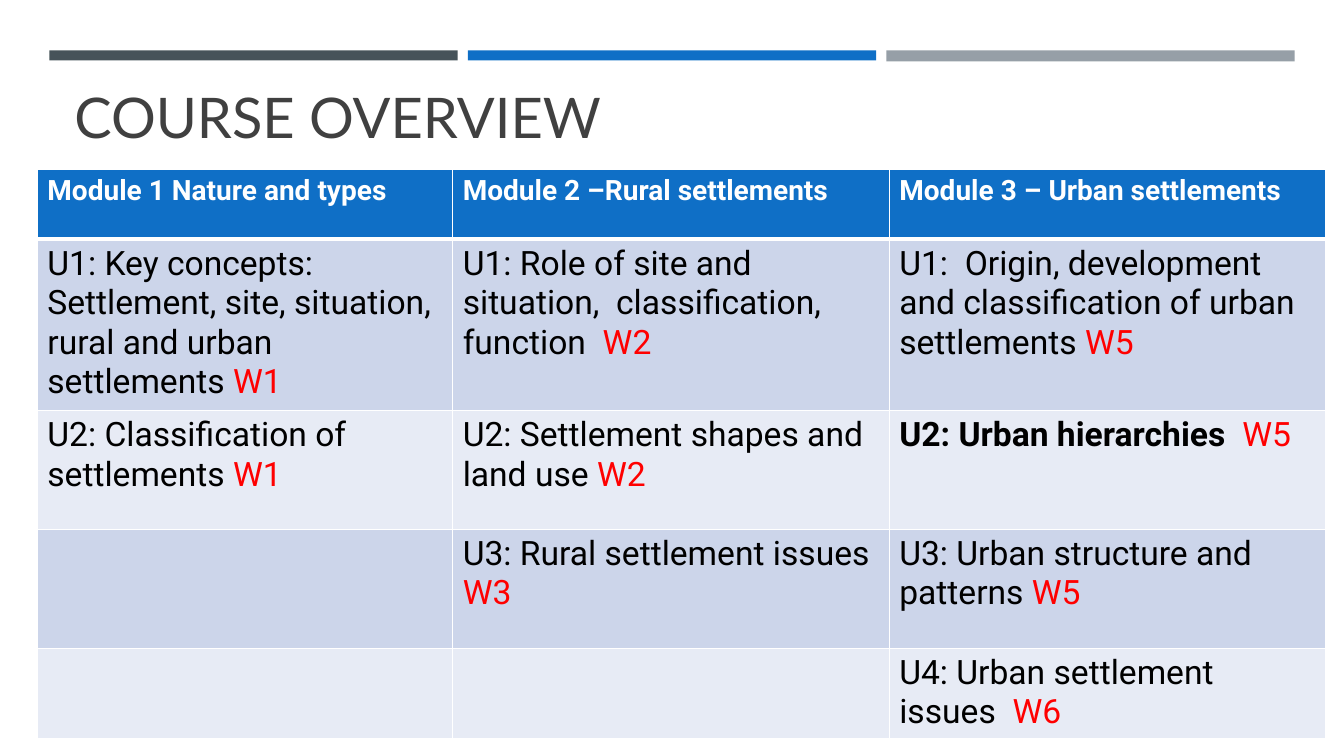
from dataclasses import dataclass

from lxml import etree
from pptx import Presentation
from pptx.dml.color import RGBColor
from pptx.enum.shapes import MSO_SHAPE
from pptx.enum.text import MSO_ANCHOR
from pptx.oxml.ns import qn
from pptx.util import Inches, Pt

RECTANGLE = MSO_SHAPE.RECTANGLE
BOTTOM = MSO_ANCHOR.BOTTOM

COLORS = {
    "slate": "465359", "blue": "0F6FC6", "grey": "969FA7",
    "title": "404040", "white": "FFFFFF", "black": "000000",
    "week": "FF0000", "band_dark": "CCD5EA", "band_light": "E7EBF5",
}
TITLE_FONT, TABLE_FONT = "Lato", "Roboto"
BAR_LEFT, BAR_TOP, BAR_WIDTH, BAR_PITCH = 0.49, 0.5, 4.05, 4.15
COLUMN_WIDTHS = (4.12, 4.33, 4.33)
ROW_HEIGHTS = (0.69, 1.69, 1.18, 1.18, 0.69)


@dataclass
class Bar:
    color: str
    height: float = 0.1


@dataclass
class Unit:
    topic: str = ""
    week: str = ""
    bold: bool = False


BARS = (Bar("slate"), Bar("blue"), Bar("grey", 0.11))
MODULES = (
    "Module 1 Nature and types",
    "Module 2 –Rural settlements",
    "Module 3 – Urban settlements",
)
UNIT_ROWS = (
    (Unit("U1: Key concepts: Settlement, site, situation, rural and urban settlements ", "W1"),
     Unit("U1: Role of site and situation,  classification, function  ", "W2"),
     Unit("U1:  Origin, development and classification of urban settlements ", "W5")),
    (Unit("U2: Classification of settlements ", "W1"),
     Unit("U2: Settlement shapes and land use ", "W2"),
     Unit("U2: Urban hierarchies  ", "W5", bold=True)),
    (Unit(),
     Unit("U3: Rural settlement issues ", "W3"),
     Unit("U3: Urban structure and patterns ", "W5")),
    (Unit(),
     Unit(),
     Unit("U4: Urban settlement issues ", " W6")),
)


def rgb(name: str) -> RGBColor:
    return RGBColor.from_string(COLORS[name])


def set_font(font, name: str, size: float, color: str | None = None) -> None:
    font.name, font.size = name, Pt(size)
    if color:
        font.color.rgb = rgb(color)


def add_bars(slide) -> None:
    for i, bar in enumerate(BARS):
        sp = slide.shapes.add_shape(
            RECTANGLE, Inches(BAR_LEFT + i * BAR_PITCH), Inches(BAR_TOP),
            Inches(BAR_WIDTH), Inches(bar.height))
        sp.shadow.inherit = False
        sp.fill.solid()
        sp.fill.fore_color.rgb = rgb(bar.color)
        sp.line.fill.background()


def add_title(slide) -> None:
    box = slide.shapes.add_textbox(Inches(0.64), Inches(0.63), Inches(12.06), Inches(0.9))
    tf = box.text_frame
    tf.word_wrap = True
    tf.vertical_anchor = BOTTOM
    p = tf.paragraphs[0]
    p.text = "COURSE OVERVIEW"
    set_font(p.font, TITLE_FONT, 40, "title")


def style_cell(cell, fill: str, top: float = 1, bottom: float = 1) -> None:
    """Fill the cell and give it white borders, widths in points."""
    cell.fill.solid()
    cell.fill.fore_color.rgb = rgb(fill)
    tc_pr = cell._tc.get_or_add_tcPr()
    widths = {"lnL": 1, "lnR": 1, "lnT": top, "lnB": bottom}
    for i, (side, width) in enumerate(widths.items()):
        ln = etree.Element(qn(f"a:{side}"), w=str(Pt(width)))
        solid = etree.SubElement(ln, qn("a:solidFill"))
        etree.SubElement(solid, qn("a:srgbClr"), val=COLORS["white"])
        tc_pr.insert(i, ln)


def write_unit(cell, unit: Unit) -> None:
    p = cell.text_frame.paragraphs[0]
    if not unit.topic:
        return
    set_font(p.font, TABLE_FONT, 24)
    for text, color, bold in ((unit.topic, "black", unit.bold), (unit.week, "week", False)):
        r = p.add_run()
        r.text = text
        r.font.bold = bold
        r.font.color.rgb = rgb(color)


def add_overview_table(slide) -> None:
    table = slide.shapes.add_table(
        len(ROW_HEIGHTS), len(COLUMN_WIDTHS), Inches(0.37), Inches(1.68),
        Inches(sum(COLUMN_WIDTHS)), Inches(sum(ROW_HEIGHTS))).table
    for column, width in zip(table.columns, COLUMN_WIDTHS):
        column.width = Inches(width)
    for row, height in zip(table.rows, ROW_HEIGHTS):
        row.height = Inches(height)

    for col, module in enumerate(MODULES):
        cell = table.cell(0, col)
        style_cell(cell, "blue", bottom=3)
        p = cell.text_frame.paragraphs[0]
        p.text = module
        set_font(p.font, TABLE_FONT, 20, "white")
        p.font.bold = True

    for row, units in enumerate(UNIT_ROWS, start=1):
        for col, unit in enumerate(units):
            cell = table.cell(row, col)
            style_cell(cell, "band_dark" if row % 2 else "band_light", top=3 if row == 1 else 1)
            write_unit(cell, unit)


def main() -> None:
    prs = Presentation()
    prs.slide_width, prs.slide_height = Inches(13.33), Inches(7.5)
    slide = prs.slides.add_slide(prs.slide_layouts[6])
    add_bars(slide)
    add_title(slide)
    add_overview_table(slide)
    prs.save("out.pptx")


if __name__ == "__main__":
    main()
